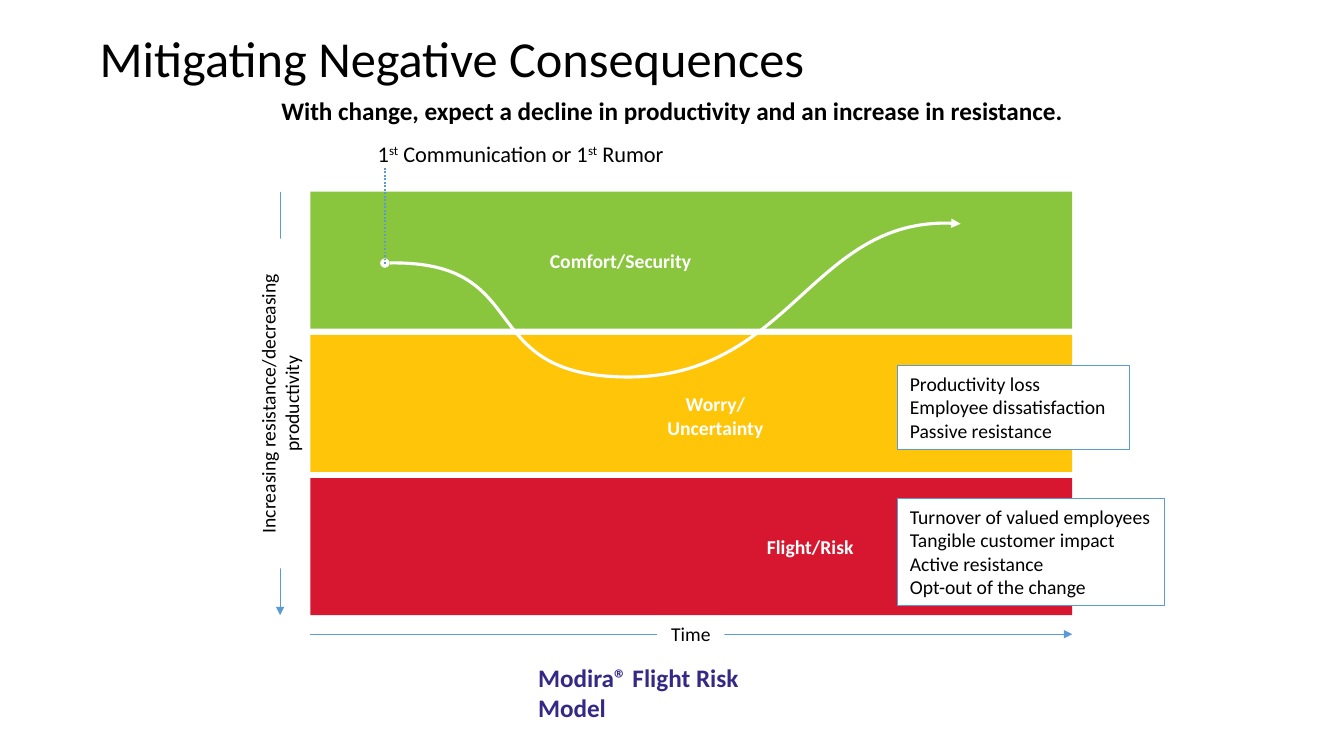
import pptx
import pptx.dml.color
import pptx.enum.dml
import pptx.enum.shapes
import pptx.enum.text
import pptx.oxml
import pptx.oxml.ns
import pptx.util
from pptx.util import Cm

BLACK, WHITE, BLUE, PURPLE = "000000", "FFFFFF", "5B9BD5", "342A86"
LEFT = pptx.enum.text.PP_ALIGN.LEFT
CENTER = pptx.enum.text.PP_ALIGN.CENTER


def color(hex_string):
    return pptx.dml.color.RGBColor.from_string(hex_string)


def set_attributes(target, values):
    for name, value in values.items():
        setattr(target, name, value)


def add_child(parent, tag, **attributes):
    child = pptx.oxml.parse_xml(f"<{tag} {pptx.oxml.ns.nsdecls('a')}/>")
    for name, value in attributes.items():
        child.set(name, str(value))
    parent.append(child)
    return child


class SlideBuilder:
    """Holds the text style and the current slide."""

    font_name = "Calibri"

    def __init__(self, slide):
        self.slide = slide

    def rectangle(self, box, fill, line=None):
        shape = self.slide.shapes.add_shape(
            pptx.enum.shapes.MSO_SHAPE.RECTANGLE, *map(Cm, box))
        shape.shadow.inherit = False
        shape.fill.solid()
        shape.fill.fore_color.rgb = color(fill)
        if line:
            self.stroke(shape, line, 0.75)
        else:
            shape.line.fill.background()
        return shape

    def text(self, box, paragraphs, size=14, ink=BLACK, bold=False, align=CENTER,
             fill=None, line=None, side=0.3, spacing=None, rotation=0, **frame_format):
        """Each paragraph is a string, or a list of runs whose odd ones are superscript."""
        if fill:
            shape = self.rectangle(box, fill, line)
        else:
            shape = self.slide.shapes.add_textbox(*map(Cm, box))
        shape.rotation = rotation
        frame = shape.text_frame
        set_attributes(frame, {
            "word_wrap": True,
            "auto_size": pptx.enum.text.MSO_AUTO_SIZE.SHAPE_TO_FIT_TEXT,
            "vertical_anchor": pptx.enum.text.MSO_ANCHOR.TOP,
            "margin_left": Cm(side), "margin_right": Cm(side),
            "margin_top": Cm(0.15), "margin_bottom": Cm(0.15),
            **frame_format})
        for index, runs in enumerate(paragraphs):
            paragraph = frame.add_paragraph() if index else frame.paragraphs[0]
            set_attributes(paragraph, {"alignment": align, "line_spacing": spacing})
            for position, content in enumerate([runs] if isinstance(runs, str) else runs):
                run = paragraph.add_run()
                run.text = content
                set_attributes(run.font, {"name": self.font_name, "bold": bold,
                                          "size": pptx.util.Pt(size)})
                run.font.color.rgb = color(ink)
                if position % 2:
                    run.font._element.set("baseline", "30000")

    def stroke(self, shape, ink, width, head=None, tail=None, dash=None):
        shape.line.color.rgb = color(ink)
        set_attributes(shape.line, {"width": pptx.util.Pt(width), "dash_style": dash})
        for tag, kind in (("a:headEnd", head), ("a:tailEnd", tail)):
            if kind:
                add_child(shape.line._get_or_add_ln(), tag, type=kind)

    def line(self, start, end, width, **ends):
        connector = self.slide.shapes.add_connector(
            pptx.enum.shapes.MSO_CONNECTOR.STRAIGHT, *map(Cm, start + end))
        self.stroke(connector, BLUE, width, **ends)
        add_child(connector._element.spPr, "a:effectLst")

    def curve(self, start, segments, ink, width, **ends):
        """Each segment is two control points and an end point."""
        builder = self.slide.shapes.build_freeform(*map(Cm, start))
        builder.add_line_segments(
            [tuple(map(Cm, segment[-1])) for segment in segments], close=False)
        shape = builder.convert_to_shape()
        shape.shadow.inherit = False
        shape.fill.background()
        self.stroke(shape, ink, width, **ends)
        # Turn the straight pieces into Bézier pieces
        straight = list(shape._element.iter(pptx.oxml.ns.qn("a:lnTo")))
        for piece, segment in zip(straight, segments):
            bezier = add_child(piece.getparent(), "a:cubicBezTo")
            for x, y in segment:
                add_child(bezier, "a:pt", x=Cm(x) - shape.left, y=Cm(y) - shape.top)
            piece.getparent().remove(piece)


def main():
    presentation = pptx.Presentation()
    set_attributes(presentation, {"slide_width": Cm(33.87), "slide_height": Cm(19.05)})
    builder = SlideBuilder(presentation.slides.add_slide(presentation.slide_layouts[6]))

    # Risk bands
    band_left, band_top, band_width, band_height, band_step = 7.82, 4.83, 19.2, 3.45, 3.61
    for index, fill in enumerate(("8AC53E", "FFC508", "D7172F")):
        builder.rectangle(
            (band_left, band_top + index * band_step, band_width, band_height), fill)

    # Model name
    builder.text((13.26, 16.54, 7.21, 1.07), ["Modira® Flight Risk Model"], size=18,
                 ink=PURPLE, bold=True, align=LEFT, word_wrap=False)

    # Axes with their names
    builder.line((band_left, 15.98), (band_left + band_width, 15.98), 0.5, tail="triangle")
    builder.text((16.56, 15.52, 1.7, 0.89), ["Time"], fill=WHITE, side=0.25)
    builder.line((7.06, band_top), (7.06, 15.5), 0.5, tail="triangle")
    builder.text((2.9, 9.42, 8.31, 1.5), ["Increasing resistance/decreasing productivity"],
                 fill=WHITE, side=0.25, rotation=270)

    # Title
    builder.text((2.26, -0.3, 29.21, 3.68), ["Mitigating Negative Consequences"], size=36,
                 align=LEFT, side=0.25, spacing=0.9,
                 vertical_anchor=pptx.enum.text.MSO_ANCHOR.MIDDLE,
                 auto_size=pptx.enum.text.MSO_AUTO_SIZE.NONE)

    # Productivity curve
    builder.curve((9.7, 6.63),
                  [((13.59, 6.5), (11.86, 9.53), (15.9, 9.5)),
                   ((19.94, 9.45), (20.5, 5.33), (24.21, 5.64))],
                  WHITE, 2.25, head="oval", tail="triangle")

    # Start of the change
    builder.text((9.22, 3.38, 8.71, 0.99),
                 [["1", "st", " Communication or 1", "st", " Rumor"]], size=16, align=LEFT)

    # Consequences
    builder.text((22.63, 9.22, 5.84, 2.11),
                 ["Productivity loss", "Employee dissatisfaction", "Passive resistance"],
                 align=LEFT, fill=WHITE, line=BLUE)
    builder.text((22.63, 12.57, 6.73, 2.69),
                 ["Turnover of valued employees", "Tangible customer impact",
                  "Active resistance", "Opt-out of the change"],
                 align=LEFT, fill=WHITE, line=BLUE, word_wrap=False)
    builder.line((9.7, 6.65), (9.7, 4.24), 1.25,
                 dash=pptx.enum.dml.MSO_LINE.ROUND_DOT)

    # Band names
    for index, name in enumerate(("Comfort/Security", "Worry/Uncertainty", "Flight/Risk")):
        builder.text((13.39 + index * 2.39, 6.12 + index * band_step, 4.5, 0.89), [name],
                     ink=WHITE, bold=True)

    # Subtitle
    builder.text((4.88, 2.24, 24.13, 1.02),
                 ["With change, expect a decline in productivity and an increase in resistance."],
                 size=18, bold=True, side=0.25)

    presentation.save("out.pptx")


if __name__ == "__main__":
    main()
